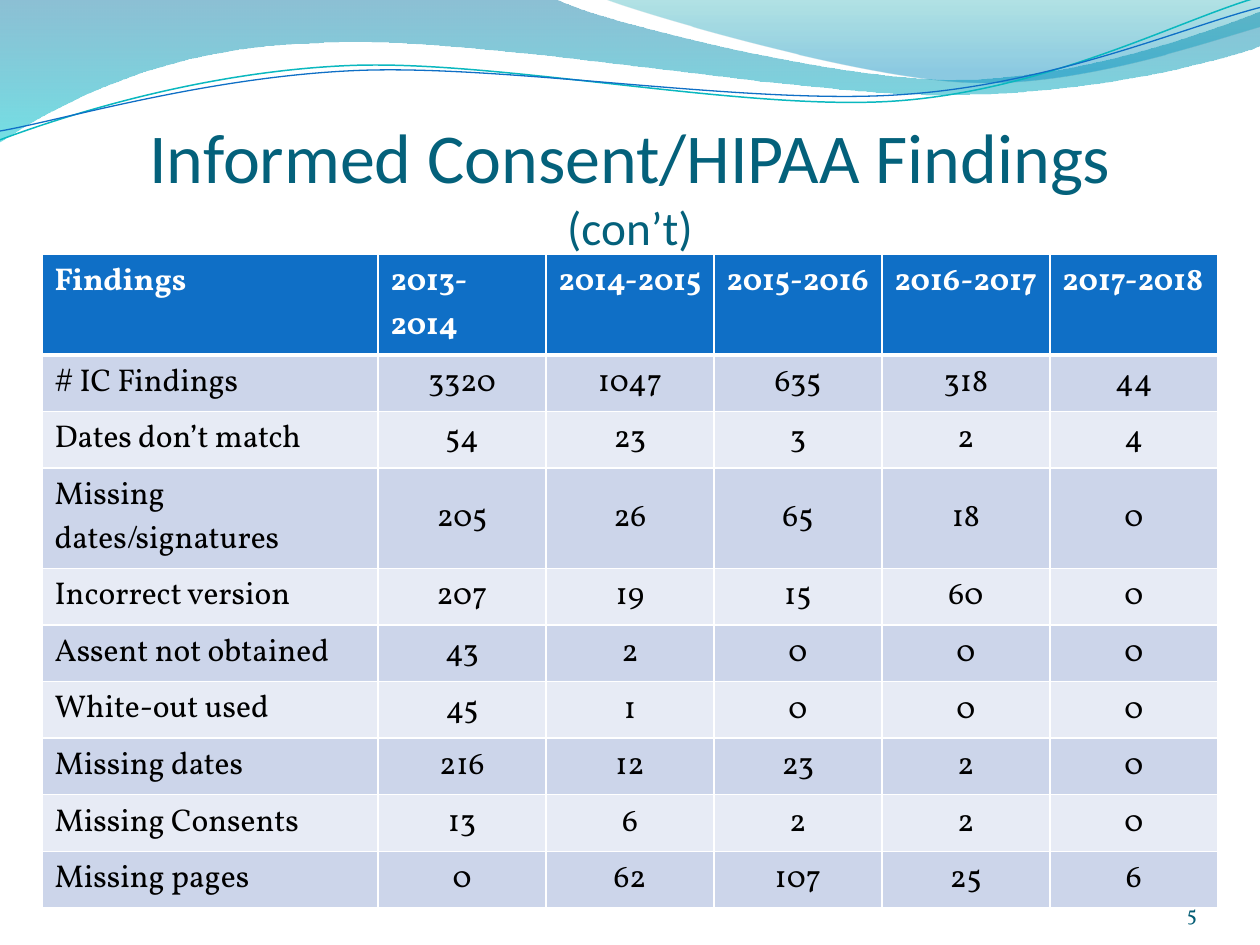
from math import cos, radians, sin

from lxml.etree import SubElement as Sub
from pptx import Presentation
from pptx.dml.color import RGBColor as RGB
from pptx.enum.text import MSO_ANCHOR as Anchor, MSO_AUTO_SIZE as Fit, PP_ALIGN as Align
from pptx.oxml.ns import qn
from pptx.util import Inches, Pt

WHITE = RGB(0xFF, 0xFF, 0xFF)
BLACK = RGB(0, 0, 0)
TITLE = RGB(0x04, 0x61, 0x7B)
PAGE = RGB(0x04, 0x5D, 0x75)
BLUE = RGB(0x0F, 0x6F, 0xC6)
TEAL = RGB(0x0A, 0xB8, 0xBF)
BANDS = (RGB(0xCC, 0xD5, 0xEA), RGB(0xE7, 0xEB, 0xF5))
SEA = ((0, RGB(0x00, 0x74, 0xA1), 45), (1, RGB(0x00, 0xC6, 0xCF), 55))
SKY = ((0, RGB(0x00, 0xA1, 0xA9), 30), (0.8, RGB(0x00, 0x8B, 0xBF), 45))
FONT = "Vollkorn"
TILT = -2.7

FILLS = (
    (SEA, [(0, 0), (4.4, -0.01), (4.76, 0.17, 6.64, 0.63, 7.58, 0.63),
           (8.53, 0.63, 9.58, 0.26, 10, 0.09), (10.01, 0.36),
           (9.83, 0.44, 8.7, 0.76, 7.46, 0.75), (6.22, 0.75, 3.82, 0.28, 2.57, 0.34),
           (1.29, 0.36, 0.46, 0.83, -0.01, 1.13)]),
    (SKY, [(4.79, -0.01), (5.09, 0.11, 6.82, 0.62, 7.69, 0.65),
           (8.56, 0.69, 9.61, 0.32, 10, 0.21), (10, 0)]),
)
LINES = (
    (TEAL, 0.85, (4.99, 0.58),
     [(0, 1.11), (0.48, 0.93, 1.58, 0.57, 2.77, 0.52),
      (3.95, 0.47, 5.93, 0.89, 7.13, 0.8), (8.33, 0.71, 9.38, 0.15, 9.98, -0.02)]),
    (BLUE, 0.75, (5, 0.59),
     [(0, 1.04), (0.47, 0.96, 1.64, 0.61, 2.83, 0.56),
      (4.03, 0.51, 5.97, 0.84, 7.17, 0.75), (8.36, 0.67, 9.41, 0.21, 10, 0.06)]),
)
HEAD = ["Findings"] + [f"{year}-{year + 1}" for year in range(2013, 2018)]
ROWS = (
    ("# IC Findings", 3320, 1047, 635, 318, 44),
    ("Dates don’t match", 54, 23, 3, 2, 4),
    ("Missing dates/signatures", 205, 26, 65, 18, 0),
    ("Incorrect version", 207, 19, 15, 60, 0),
    ("Assent not obtained", 43, 2, 0, 0, 0),
    ("White-out used", 45, 1, 0, 0, 0),
    ("Missing dates", 216, 12, 23, 2, 0),
    ("Missing Consents", 13, 6, 2, 2, 0),
    ("Missing pages", 0, 62, 107, 25, 6),
)


def style(run, size, color, name=FONT, bold=False):
    run.font.size = Pt(size)
    run.font.name = name
    run.font.bold = bold
    run.font.color.rgb = color


def turn(x, y, center, angle):
    a, dx, dy = radians(angle), x - center[0], y - center[1]
    return center[0] + dx * cos(a) - dy * sin(a), center[1] + dx * sin(a) + dy * cos(a)


def outline(shapes, steps, left, top, close, center=(0, 0), angle=0):
    pairs = [pair for step in steps for pair in zip(step[::2], step[1::2])]
    spun = [turn(x, y, center, -angle) for x, y in pairs]
    points = [(left + Inches(x), top + Inches(y)) for x, y in spun]
    draft = shapes.build_freeform(*points[0])
    draft.add_line_segments(points[1:], close=close)
    shape = draft.convert_to_shape()
    shape.shadow.inherit = False
    shape.rotation = angle
    legs = iter(list(shape.element.iter(qn("a:lnTo"))))
    for step in steps[1:]:
        first = next(legs)
        if len(step) == 6:
            curve = first.makeelement(qn("a:cubicBezTo"))
            first.addprevious(curve)
            for leg in (first, next(legs), next(legs)):
                curve.append(leg[0])
                leg.getparent().remove(leg)
    return shape


def add_waves(slide, left, top):
    for stops, steps in FILLS:
        wave = outline(slide.shapes, steps, left, top, True)
        wave.line.fill.background()
        wave.fill.gradient()
        wave.fill.gradient_angle = 270
        nodes = wave.element.iter(qn("a:gs"))
        for stop, node, (place, color, alpha) in zip(wave.fill.gradient_stops, nodes, stops):
            stop.position = place
            stop.color.rgb = color
            Sub(node[0], qn("a:alpha"), val=str(alpha * 1000))
    group = slide.shapes.add_group_shape()
    for color, width, center, steps in LINES:
        wave = outline(group.shapes, steps, left, top, False, center, TILT)
        wave.fill.background()
        wave.line.color.rgb = color
        wave.line.width = Pt(width)


def add_title(slide, left, top, width, height):
    title = slide.shapes.title
    title.element.getparent().append(title.element)
    title.left, title.top, title.width, title.height = left, top, width, height
    frame = title.text_frame
    frame.margin_left = frame.margin_right = frame.margin_bottom = 0
    frame.margin_top = Inches(0.05)
    frame.vertical_anchor = Anchor.BOTTOM
    frame.auto_size = Fit.NONE
    line = frame.paragraphs[0]
    line.text = "Informed Consent/HIPAA Findings\v(con’t)"
    line.alignment = Align.CENTER
    for run, size in zip(line.runs, (40, 27)):
        style(run, size, TITLE, "Calibri")
    for gap in title.element.iter(qn("a:br")):
        Sub(gap, qn("a:rPr"), sz="4000")


def edge(cell, base):
    props = cell._tc.get_or_add_tcPr()
    for side, width in (("L", 1), ("R", 1), ("T", 1), ("B", base)):
        line = Sub(props, qn(f"a:ln{side}"), w=str(Pt(width)))
        Sub(Sub(line, qn("a:solidFill")), qn("a:srgbClr"), val=str(WHITE))


def add_grid(slide, left, top, width, height):
    data = (HEAD, *ROWS)
    grid = slide.shapes.add_table(len(data), len(HEAD), left, top, width, height).table
    unit = width // (len(HEAD) + 1)
    for c, column in enumerate(grid.columns):
        column.width = unit if c else 2 * unit
    for r, values in enumerate(data):
        grid.rows[r].height = height // len(data)
        for c, value in enumerate(values):
            cell = grid.cell(r, c)
            edge(cell, 1 if r else 3)
            cell.fill.solid()
            cell.fill.fore_color.rgb = BANDS[(r - 1) % 2] if r else BLUE
            line = cell.text_frame.paragraphs[0]
            line.text = str(value)
            style(line.runs[0], 18, BLACK if r else WHITE, bold=not r)
            if r and c:
                line.alignment = Align.CENTER
                cell.vertical_anchor = Anchor.MIDDLE


def add_page(slide, left, top, width, height):
    frame = slide.shapes.add_textbox(left, top, width, height).text_frame
    frame.word_wrap = True
    frame.margin_left = frame.margin_right = frame.margin_top = frame.margin_bottom = 0
    frame.vertical_anchor = Anchor.BOTTOM
    line = frame.paragraphs[0]
    line.text = "5"
    line.alignment = Align.RIGHT
    style(line.runs[0], 12, PAGE)


def main():
    deck = Presentation()
    deck.slide_width, deck.slide_height = Inches(10), Inches(7.5)
    slide = deck.slides.add_slide(deck.slide_layouts[5])
    add_waves(slide, 0, 0)
    add_title(slide, Inches(0.5), Inches(0.77), Inches(9), Inches(1.25))
    add_grid(slide, Inches(1) // 3, Inches(2.02), Inches(28) // 3, Inches(4.06))
    add_page(slide, Inches(8.67), Inches(6.95), Inches(0.83), Inches(0.4))
    deck.save("out.pptx")


if __name__ == "__main__":
    main()
